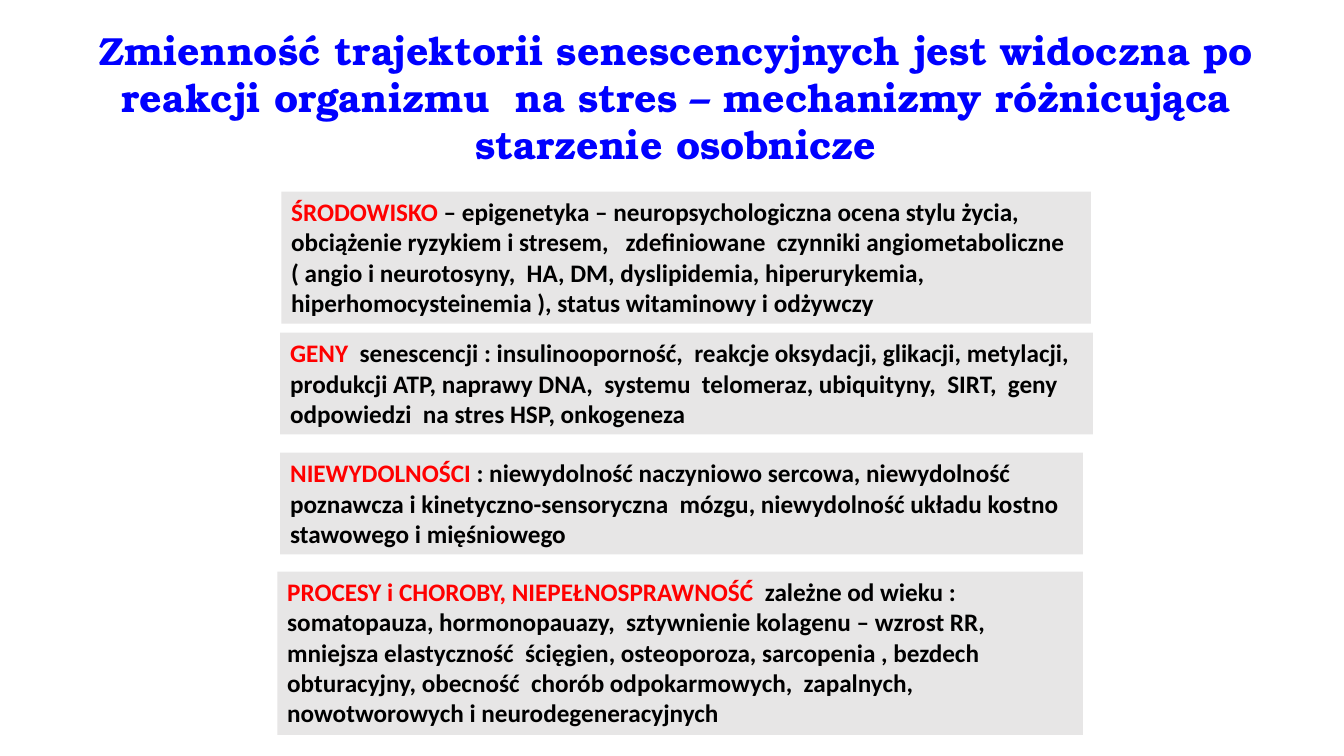
"""Build the slide on senescence trajectories and the mechanisms of individual ageing."""
from dataclasses import dataclass

from pptx import Presentation
from pptx.dml.color import RGBColor
from pptx.enum.shapes import MSO_SHAPE
from pptx.enum.text import MSO_ANCHOR, PP_ALIGN
from pptx.util import Inches, Pt

RECTANGLE = MSO_SHAPE.RECTANGLE
TOP = MSO_ANCHOR.TOP
LEFT, CENTER = PP_ALIGN.LEFT, PP_ALIGN.CENTER


@dataclass(frozen=True)
class Theme:
    heading_font: str = "TeX Gyre Bonum"
    body_font: str = "Calibri"
    heading_size: Pt = Pt(28)
    body_size: Pt = Pt(18)
    heading: RGBColor = RGBColor(0x00, 0x00, 0xFF)
    keyword: RGBColor = RGBColor(0xFF, 0x00, 0x00)
    body: RGBColor = RGBColor(0x00, 0x00, 0x00)
    panel: RGBColor = RGBColor(0xE7, 0xE6, 0xE6)


THEME = Theme()


def style(paragraph, font_name, size, color, alignment):
    paragraph.alignment = alignment
    paragraph.font.name = font_name
    paragraph.font.size = size
    paragraph.font.bold = True
    paragraph.font.color.rgb = color


presentation = Presentation()
presentation.slide_width = Inches(13.33)
presentation.slide_height = Inches(7.5)
slide = presentation.slides.add_slide(presentation.slide_layouts[6])

heading = slide.shapes.add_textbox(Inches(0.3), Inches(0.21), Inches(12.81), Inches(1.51))
heading.text_frame.word_wrap = True
heading_line = heading.text_frame.paragraphs[0]
heading_line.text = (
    "Zmienność trajektorii senescencyjnych jest widoczna po reakcji organizmu  na stres "
    "– mechanizmy różnicująca starzenie osobnicze"
)
style(heading_line, THEME.heading_font, THEME.heading_size, THEME.heading, CENTER)

mechanisms = [
    ((2.79, 1.9, 8.03, 1.31), "ŚRODOWISKO", [
        " – epigenetyka – neuropsychologiczna ocena stylu życia, obciążenie ryzykiem "
        "i stresem,   zdefiniowane  czynniki angiometaboliczne",
        "( angio i neurotosyny,  HA, DM, dyslipidemia, hiperurykemia, "
        "hiperhomocysteinemia ), status witaminowy i odżywczy",
    ]),
    ((2.78, 3.3, 8.06, 1.01), "GENY", [
        "  senescencji : insulinooporność,  reakcje oksydacji, glikacji, metylacji, "
        "produkcji ATP, naprawy DNA,  systemu  telomeraz, ubiquityny,  SIRT,  geny "
        "odpowiedzi  na stres HSP, onkogeneza",
    ]),
    ((2.78, 4.49, 7.96, 1.01), "NIEWYDOLNOŚCI", [
        " : niewydolność naczyniowo sercowa, niewydolność  poznawcza i "
        "kinetyczno-sensoryczna  mózgu, niewydolność układu kostno stawowego i mięśniowego",
    ]),
    ((2.75, 5.67, 7.99, 1.62), "PROCESY i CHOROBY, NIEPEŁNOSPRAWNOŚĆ", [
        "  zależne od wieku : somatopauza, hormonopauazy,  sztywnienie kolagenu – wzrost RR, "
        "mniejsza elastyczność  ścięgien, osteoporoza, sarcopenia , bezdech obturacyjny, "
        "obecność  chorób odpokarmowych,  zapalnych, nowotworowych i neurodegeneracyjnych",
    ]),
]

for bounds, keyword, descriptions in mechanisms:
    panel = slide.shapes.add_shape(RECTANGLE, *map(Inches, bounds))
    panel.shadow.inherit = False
    panel.fill.solid()
    panel.fill.fore_color.rgb = THEME.panel
    panel.line.fill.background()
    frame = panel.text_frame
    frame.word_wrap = True
    frame.vertical_anchor = TOP
    for index, description in enumerate(descriptions):
        paragraph = frame.add_paragraph() if index else frame.paragraphs[0]
        style(paragraph, THEME.body_font, THEME.body_size, THEME.body, LEFT)
        if index == 0:
            keyword_run = paragraph.add_run()
            keyword_run.text = keyword
            keyword_run.font.color.rgb = THEME.keyword
        description_run = paragraph.add_run()
        description_run.text = description
        description_run.font.color.rgb = THEME.body

presentation.save("out.pptx")
